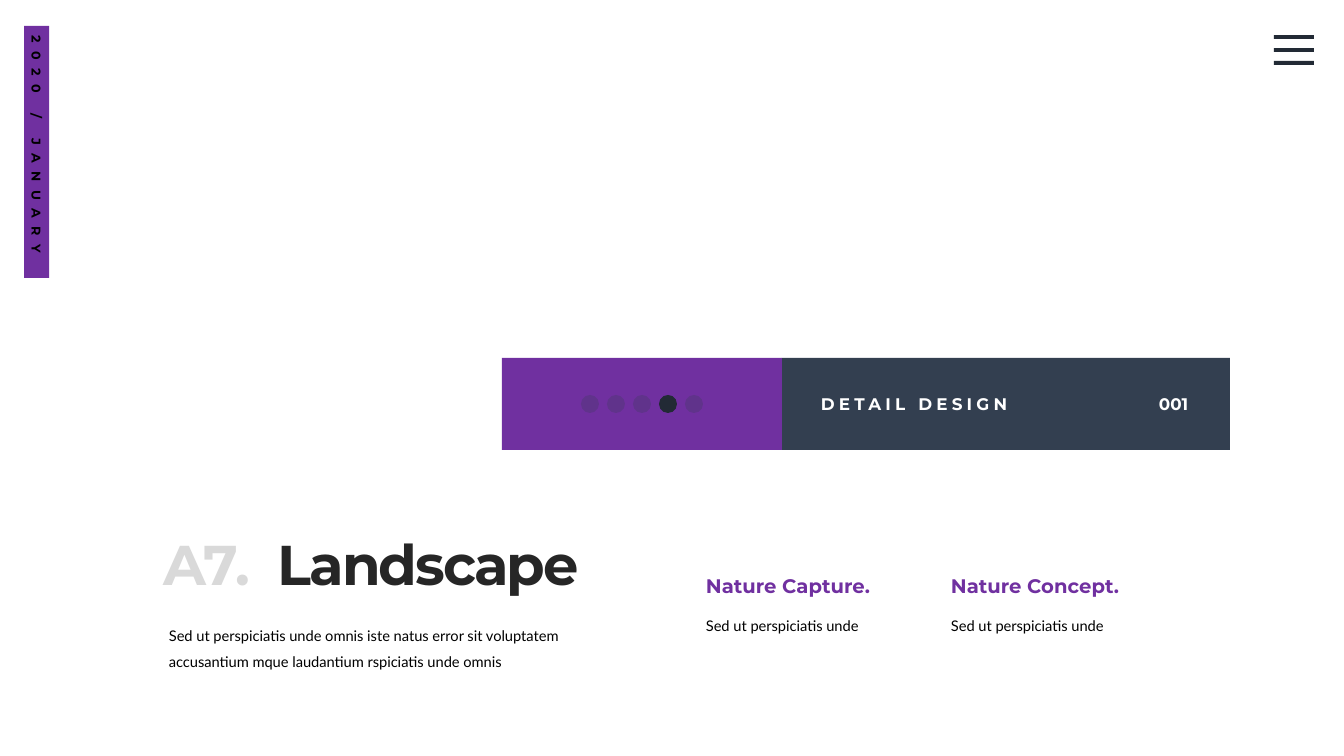
from dataclasses import dataclass

from lxml import etree
from pptx import Presentation
from pptx.dml.color import RGBColor
from pptx.enum.shapes import MSO_SHAPE
from pptx.enum.text import MSO_ANCHOR, MSO_AUTO_SIZE, PP_ALIGN
from pptx.oxml.ns import qn
from pptx.util import Emu, Pt

RECT, OVAL = MSO_SHAPE.RECTANGLE, MSO_SHAPE.OVAL
LEFT = PP_ALIGN.LEFT
TOP, MIDDLE = MSO_ANCHOR.TOP, MSO_ANCHOR.MIDDLE
GROW, FIXED = MSO_AUTO_SIZE.SHAPE_TO_FIT_TEXT, MSO_AUTO_SIZE.NONE

EMU_PER_PX = 914400 / 100.8
SLIDE_W, SLIDE_H = 1344, 756


@dataclass(frozen=True)
class Theme:
    purple: str = "7030A0"
    slate: str = "333F50"
    navy: str = "222A35"
    ink: str = "262626"
    pale: str = "D9D9D9"
    black: str = "000000"
    white: str = "FFFFFF"
    heading_font: str = "Montserrat"
    body_font: str = "Lato"
    title_size: float = 40
    subhead_size: float = 14
    banner_size: float = 12
    body_size: float = 10.5
    date_size: float = 9


def px(length):
    return Emu(round(length * EMU_PER_PX))


class SlideBuilder:
    def __init__(self, slide, theme):
        self.slide = slide
        self.theme = theme

    def block(self, x, y, w, h, color, kind=RECT, opacity=100):
        shape = self.slide.shapes.add_shape(kind, px(x), px(y), px(w), px(h))
        shape.shadow.inherit = False
        shape.fill.solid()
        shape.fill.fore_color.rgb = RGBColor.from_string(color)
        shape.line.fill.background()
        if opacity < 100:
            rgb = shape._element.spPr.find(qn("a:solidFill")).find(qn("a:srgbClr"))
            etree.SubElement(rgb, qn("a:alpha")).set("val", str(opacity * 1000))
        return shape

    def set_text(self, shape, words, size, color, font, bold, spacing=0,
                 wrap=False, fit=GROW, anchor=TOP, leading=None):
        frame = shape.text_frame
        frame.word_wrap = wrap
        frame.auto_size = fit
        frame.vertical_anchor = anchor
        paragraph = frame.paragraphs[0]
        paragraph.alignment = LEFT
        if leading:
            paragraph.line_spacing = leading
        run = paragraph.add_run()
        run.text = words
        if spacing:
            run._r.get_or_add_rPr().set("spc", str(round(spacing * 100)))
        paragraph.font.name = font
        paragraph.font.size = Pt(size)
        paragraph.font.bold = bold
        paragraph.font.color.rgb = RGBColor.from_string(color)

    def heading(self, x, y, w, h, words, size, color, spacing=0, wrap=False):
        box = self.slide.shapes.add_textbox(px(x), px(y), px(w), px(h))
        self.set_text(box, words, size, color, self.theme.heading_font, True,
                      spacing, wrap)

    def body(self, x, y, w, h, words):
        box = self.slide.shapes.add_textbox(px(x), px(y), px(w), px(h))
        self.set_text(box, words, self.theme.body_size, self.theme.black,
                      self.theme.body_font, False, wrap=True, fit=FIXED, leading=1.5)

    def side_label(self, x, y, w, h, words):
        # Given as drawn; the unrotated frame shares its centre
        label = self.block(x + (w - h) / 2, y + (h - w) / 2, h, w, self.theme.purple)
        label.rotation = 90
        self.set_text(label, words, self.theme.date_size, self.theme.black,
                      self.theme.heading_font, True, spacing=6, anchor=MIDDLE)


def main():
    deck = Presentation()
    deck.slide_width, deck.slide_height = px(SLIDE_W), px(SLIDE_H)
    theme = Theme()
    page = SlideBuilder(deck.slides.add_slide(deck.slide_layouts[6]), theme)

    # Banner
    page.block(782, 358, 448, 92, theme.slate)
    page.heading(1149, 389, 50, 30, "001", theme.banner_size, theme.white)
    page.heading(811, 389, 212, 30, "DETAIL DESIGN", theme.banner_size,
                 theme.white, spacing=3)
    page.block(502, 358, 280, 92, theme.purple)

    # Page dots
    dot_count, active_dot = 5, 3
    for i in range(dot_count):
        active = i == active_dot
        page.block(581 + 26 * i, 395, 18, 18, theme.navy if active else theme.slate,
                   OVAL, 100 if active else 25)

    # Date label
    page.side_label(24, 26, 25, 252, "2020 / JANUARY")

    # Menu icon
    for i in range(3):
        page.block(1274, 35 + 13 * i, 40, 4, theme.navy)

    # Title and introduction
    page.heading(154, 525, 114, 78, "A7.", theme.title_size, theme.pale)
    page.heading(268, 525, 393, 78, "Landscape", theme.title_size, theme.ink,
                 spacing=-1.5, wrap=True)
    page.body(159, 613, 467, 78,
              "Sed ut perspiciatis unde omnis iste natus error sit voluptatem "
              "accusantium mque laudantium rspiciatis unde omnis")

    # Nature columns
    for x, subhead in ((696, "Nature Capture."), (941, "Nature Concept.")):
        page.body(x, 603, 266, 34, "Sed ut perspiciatis unde")
        page.heading(x, 569, 208, 34, subhead, theme.subhead_size, theme.purple, wrap=True)

    deck.save("out.pptx")


if __name__ == "__main__":
    main()
